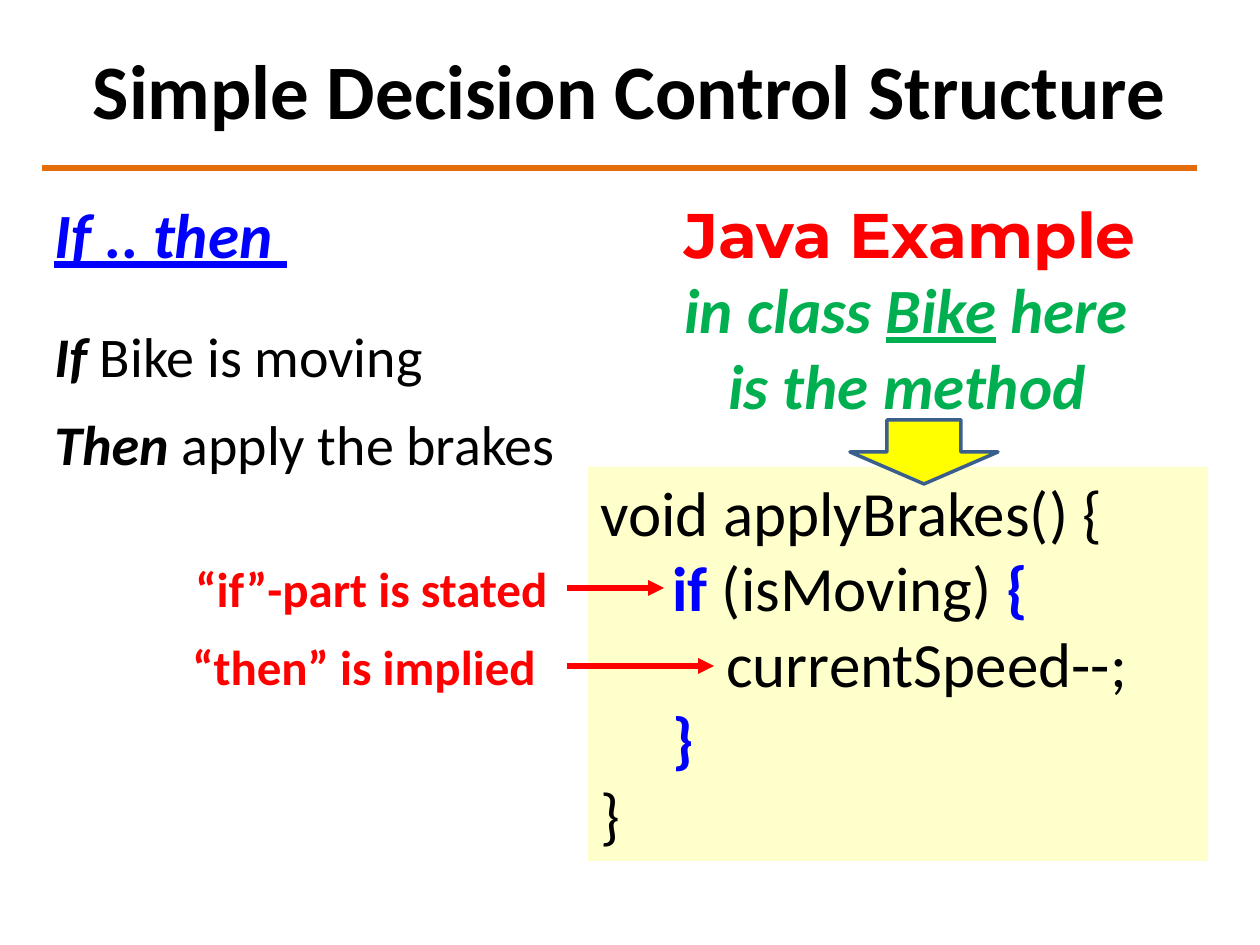
from lxml import etree
from pptx import Presentation
from pptx.dml.color import RGBColor
from pptx.enum.shapes import MSO_CONNECTOR, MSO_SHAPE
from pptx.enum.text import MSO_ANCHOR, PP_ALIGN
from pptx.oxml.ns import qn
from pptx.util import Pt

PX = 7257
LINE, RECTANGLE, DOWN_ARROW = MSO_CONNECTOR.STRAIGHT, MSO_SHAPE.RECTANGLE, MSO_SHAPE.DOWN_ARROW
LEFT, CENTER = PP_ALIGN.LEFT, PP_ALIGN.CENTER
TOP, MIDDLE = MSO_ANCHOR.TOP, MSO_ANCHOR.MIDDLE
BLACK = RGBColor(0x00, 0x00, 0x00)
BLUE = RGBColor(0x00, 0x00, 0xFF)
RED = RGBColor(0xFF, 0x00, 0x00)
GREEN = RGBColor(0x00, 0xB0, 0x50)
ORANGE = RGBColor(0xE4, 0x6C, 0x0A)
CREAM = RGBColor(0xFF, 0xFF, 0xCC)
YELLOW = RGBColor(0xFF, 0xFF, 0x00)
STEEL = RGBColor(0x3A, 0x5F, 0x8C)


def write(box, size, lines, align=LEFT, anchor=TOP):
    frame = box.text_frame
    frame.word_wrap = True
    frame.vertical_anchor = anchor
    for number, (indent, spans) in enumerate(lines):
        paragraph = frame.add_paragraph() if number else frame.paragraphs[0]
        paragraph.alignment = align
        paragraph.font.size = Pt(size)
        paragraph.font.name = "Calibri"
        if indent:
            properties = paragraph._p.get_or_add_pPr()
            properties.set("marL", str(indent * PX))
            properties.set("indent", "0")
        for text, color, style in spans:
            span = paragraph.add_run()
            span.text = text
            span.font.color.rgb = color
            span.font.bold = "b" in style
            span.font.italic = "i" in style
            span.font.underline = "u" in style
    return frame.paragraphs


def draw_line(shapes, left, right, y, color):
    line = shapes.add_connector(LINE, left * PX, y * PX, right * PX, y * PX)
    line.line.color.rgb = color
    line.line.width = Pt(3)
    etree.SubElement(line._element.spPr, qn("a:effectLst"))
    return line


deck = Presentation()
deck.slide_width, deck.slide_height = 1260 * PX, 945 * PX
page = deck.slides.add_slide(deck.slide_layouts[6])
shapes = page.shapes

title = shapes.add_textbox(63 * PX, 10 * PX, 1134 * PX, 158 * PX)
write(title, 44, [(0, [("Simple Decision Control Structure", BLACK, "b")])], CENTER, MIDDLE)
draw_line(shapes, 42, 1197, 168, ORANGE)

heading = shapes.add_textbox(42 * PX, 189 * PX, 1155 * PX, 242 * PX)
example_indent = 630
first_line = write(heading, 36, [
    (0, [("If .. then ", BLUE, "biu"), ("\t", BLUE, "b"), ("Java Example", RED, "b")]),
    (example_indent, [("in class ", GREEN, "bi"), ("Bike", GREEN, "biu"), (" here", GREEN, "bi")]),
    (example_indent + 44, [("is the method", GREEN, "bi")]),
])[0]
first_line.runs[-1].font.name = "Montserrat"
tabs = etree.Element(qn("a:tabLst"))
etree.SubElement(tabs, qn("a:tab"), pos=str(example_indent * PX), algn="l")
first_line._p.get_or_add_pPr().insert(0, tabs)

rule = shapes.add_textbox(42 * PX, 315 * PX, 546 * PX, 170 * PX)
condition = write(rule, 32, [
    (0, [("If", BLACK, "bi"), (" Bike is moving", BLACK, "")]),
    (0, [("Then", BLACK, "bi"), (" apply the brakes", BLACK, "")]),
])[0]
condition.space_after = Pt(12)

code = shapes.add_shape(RECTANGLE, 588 * PX, 467 * PX, 620 * PX, 394 * PX)
code.shadow.inherit = False
code.fill.solid()
code.fill.fore_color.rgb = CREAM
code.line.fill.background()
write(code, 36, [
    (0, [("void applyBrakes() {", BLACK, "")]),
    (72, [("if ", BLUE, "b"), ("(isMoving) ", BLACK, ""), ("{", BLUE, "b")]),
    (126, [("currentSpeed--;", BLACK, "")]),
    (72, [("}", BLUE, "b")]),
    (0, [("}", BLACK, "")]),
])

for text, left, top, tip in [
    ("“if”-part is stated", 183, 552, 664),
    ("“then” is implied", 180, 630, 714),
]:
    callout = shapes.add_group_shape()
    label = callout.shapes.add_textbox(left * PX, top * PX, 481 * PX, 72 * PX)
    write(label, 28, [(0, [(text, RED, "b")])])
    pointer = draw_line(callout.shapes, 567, tip, top + 36, RED)
    etree.SubElement(pointer.line._get_or_add_ln(), qn("a:tailEnd"), type="triangle")

arrow = shapes.add_shape(DOWN_ARROW, 850 * PX, 420 * PX, 148 * PX, 64 * PX)
arrow.shadow.inherit = False
arrow.fill.solid()
arrow.fill.fore_color.rgb = YELLOW
arrow.line.color.rgb = STEEL
arrow.line.width = Pt(2)

deck.save("out.pptx")
